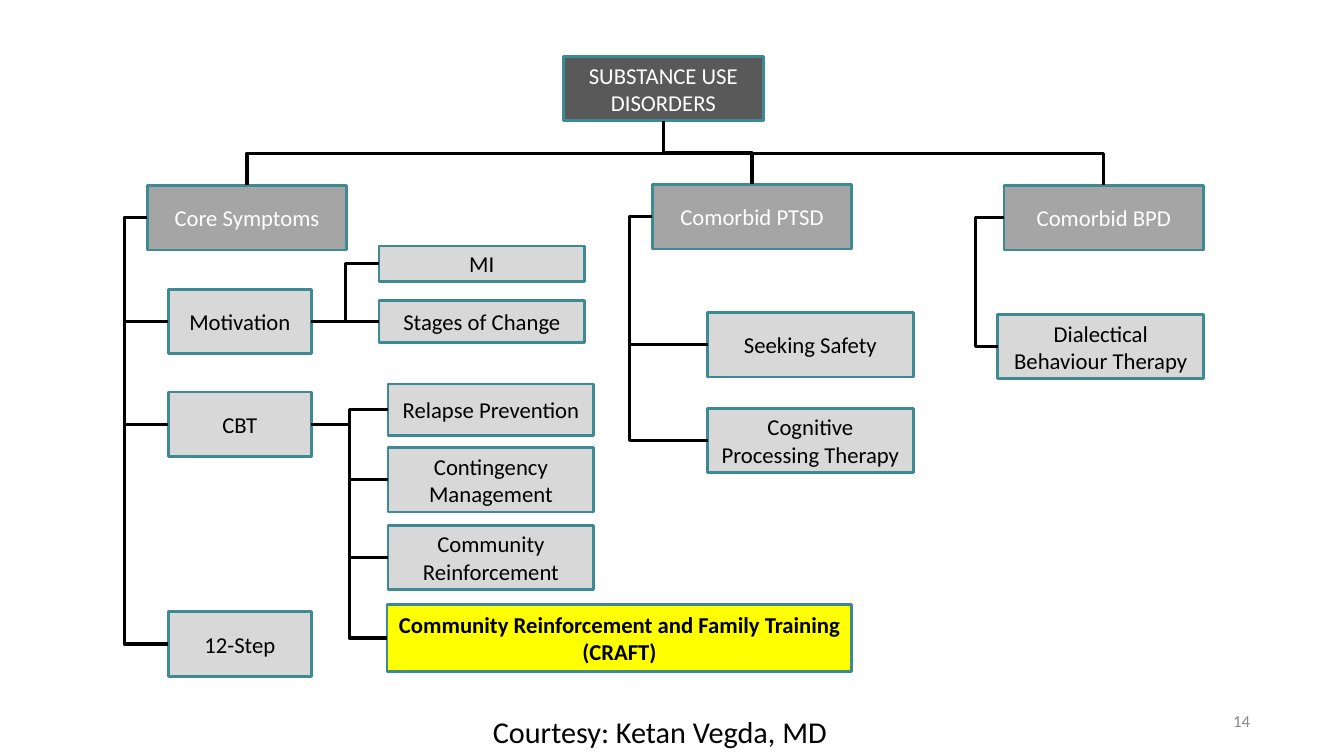
from lxml import etree
from pptx import Presentation
from pptx.dml.color import RGBColor
from pptx.enum import shapes, text
from pptx.oxml import ns
from pptx.util import Pt

COLORS = {"root": "595959", "branch": "A5A5A5", "therapy": "D8D8D8", "highlight": "FFFF00",
          "border": "3E8A94", "line": "000000", "light": "FFFFFF", "dark": "000000",
          "number": "888888"}

BOXES = {
    "sud": ("root", ["SUBSTANCE USE DISORDERS"], 402.5, 40.3, 142.6, 46.1),
    "core": ("branch", ["Core Symptoms"], 105.1, 132.5, 142.6, 46.1),
    "ptsd": ("branch", ["Comorbid PTSD"], 465.8, 131.8, 142.6, 46.1),
    "bpd": ("branch", ["Comorbid BPD"], 717.1, 132.5, 142.6, 46.1),
    "motivation": ("therapy", ["Motivation"], 120.2, 206.6, 102.2, 46.1),
    "cbt": ("therapy", ["CBT"], 120.2, 280.1, 102.2, 46.1),
    "twelve": ("therapy", ["12-Step"], 120.2, 437, 102.2, 46.1),
    "mi": ("therapy", ["MI"], 270.7, 175.7, 146.9, 25.2),
    "stages": ("therapy", ["Stages of Change"], 270.7, 214.55, 146.9, 30.2),
    "relapse": ("therapy", ["Relapse Prevention"], 277.2, 274.3, 146.9, 36.7),
    "contingency": ("therapy", ["Contingency Management"], 277.2, 319.7, 146.9, 46.1),
    "community": ("therapy", ["Community Reinforcement"], 277.2, 375.1, 146.9, 46.1),
    "craft": ("highlight", ["Community Reinforcement and Family Training", "(CRAFT)"],
              276.5, 432, 331.9, 47.5),
    "seeking": ("therapy", ["Seeking Safety"], 505.4, 223.2, 146.9, 46.1),
    "cognitive": ("therapy", ["Cognitive Processing Therapy"], 505.4, 291.6, 146.9, 46.1),
    "dialectical": ("therapy", ["Dialectical Behaviour Therapy"], 712.8, 224.6, 146.9, 46.1),
}
BRANCHES = [
    ("sud", "down", ["core", "bpd", "ptsd"]),
    ("core", "left", ["motivation", "cbt", "twelve"]),
    ("ptsd", "left", ["seeking", "cognitive"]),
    ("bpd", "left", ["dialectical"]),
    ("motivation", "right", ["mi", "stages"]),
    ("cbt", "right", ["relapse", "contingency", "community", "craft"]),
]
CREDIT = "Courtesy: Ketan Vegda, MD"
PAGE_NUMBER = "14"
TOP, LEFT, BOTTOM, RIGHT = range(4)
SIDES = {"down": (BOTTOM, TOP), "left": (LEFT, LEFT), "right": (RIGHT, LEFT)}
OUTSET = Pt(16.2)

deck = Presentation()
deck.slide_width, deck.slide_height = Pt(960), Pt(540)
slide = deck.slides.add_slide(deck.slide_layouts[6])


def color(name):
    return RGBColor.from_string(COLORS[name])


def write(holder, lines, size, ink, align=text.PP_ALIGN.CENTER, bold=False,
          anchor=text.MSO_ANCHOR.MIDDLE, side_margin=8.64):
    frame = holder.text_frame
    frame.word_wrap = True
    frame.vertical_anchor = anchor
    frame.margin_left = frame.margin_right = Pt(side_margin)
    frame.margin_top = frame.margin_bottom = Pt(4.32)
    for index, line in enumerate(lines):
        paragraph = frame.add_paragraph() if index else frame.paragraphs[0]
        paragraph.alignment = align
        run = paragraph.add_run()
        run.text = line
        run.font.name, run.font.size, run.font.bold = "Calibri", Pt(size), bold
        run.font.color.rgb = color(ink)


def add_box(level, lines, *place):
    box = slide.shapes.add_shape(shapes.MSO_SHAPE.RECTANGLE, *map(Pt, place))
    box.shadow.inherit = False
    box.fill.solid()
    box.fill.fore_color.rgb = color(level)
    box.line.color.rgb = color("border")
    box.line.width = Pt(2)
    ink = "light" if level in ("root", "branch") else "dark"
    highlighted = level == "highlight"
    write(box, lines, 16.2, ink, bold=highlighted, side_margin=4 if highlighted else 8.64)
    return box


def site(box, side):
    x = {LEFT: box.left, RIGHT: box.left + box.width}.get(side, box.left + box.width // 2)
    y = {TOP: box.top, BOTTOM: box.top + box.height}.get(side, box.top + box.height // 2)
    return x, y


def join(parent, child, direction):
    start, end = SIDES[direction]
    (x1, y1), (x2, y2) = site(parent, start), site(child, end)
    elbow = slide.shapes.add_connector(shapes.MSO_CONNECTOR.ELBOW, x1, y1, x2, y2)
    elbow.begin_connect(parent, start)
    elbow.end_connect(child, end)
    elbow.line.color.rgb = color("line")
    elbow.line.width = Pt(2.25)
    properties = elbow._element.spPr
    bend = 0.5
    if direction == "left":
        bend = (min(x1, x2) - OUTSET - x1) / (x2 - x1)
    if direction == "down":
        across, down = x2 - x1, y2 - y1
        middle_x, middle_y = (x1 + x2) // 2, (y1 + y2) // 2
        elbow.begin_x, elbow.begin_y = middle_x - down // 2, middle_y + across // 2
        elbow.end_x, elbow.end_y = middle_x + down // 2, middle_y - across // 2
        properties.find(ns.qn("a:xfrm")).set("rot", "5400000")
    guides = properties.find(ns.qn("a:prstGeom")).find(ns.qn("a:avLst"))
    etree.SubElement(guides, ns.qn("a:gd"), name="adj1", fmla=f"val {round(bend * 100000)}")
    etree.SubElement(properties, ns.qn("a:effectLst"))


boxes = {name: add_box(*box) for name, box in BOXES.items()}
for parent, direction, children in BRANCHES:
    for child in children:
        join(boxes[parent], boxes[child], direction)

number = slide.shapes.add_textbox(Pt(869), Pt(500.4), Pt(36), Pt(28.8))
write(number, [PAGE_NUMBER], 12, "number")
credit = slide.shapes.add_textbox(Pt(343.4), Pt(505.4), Pt(269.3), Pt(34.6))
write(credit, [CREDIT], 21.6, "dark", text.PP_ALIGN.LEFT, anchor=text.MSO_ANCHOR.TOP)

deck.save("out.pptx")
